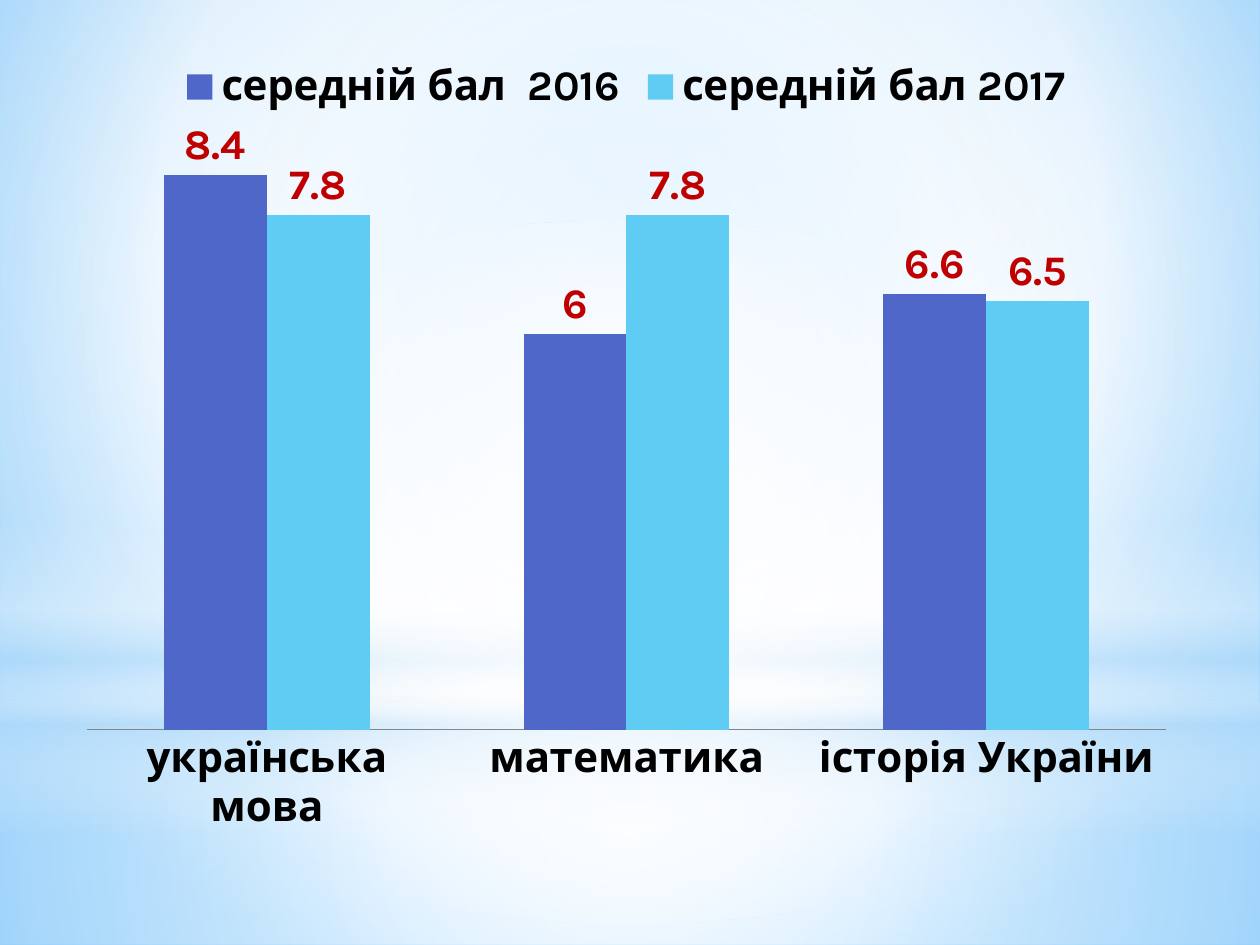
from typing import NamedTuple, Optional

from lxml.etree import SubElement
from pptx import Presentation
from pptx.chart.data import CategoryChartData
from pptx.dml.color import RGBColor
from pptx.enum.chart import XL_CHART_TYPE as Kind
from pptx.enum.chart import XL_LABEL_POSITION as Spot
from pptx.enum.chart import XL_LEGEND_POSITION as Side
from pptx.enum.chart import XL_TICK_MARK as Tick
from pptx.enum.shapes import MSO_SHAPE as Form
from pptx.oxml.ns import qn
from pptx.util import Cm, Pt


class Stop(NamedTuple):
    place: int
    color: str
    alpha: int = 100


class Glow(NamedTuple):
    """A soft layer over the full slide width; no focus means a vertical fade."""
    form: Form
    top: float
    height: float
    stops: list[Stop]
    focus: Optional[tuple] = (50, 50, 50, 50)


class Series(NamedTuple):
    name: str
    values: list[float]
    color: str


WIDE, HIGH = 25.4, 19.05
SKY, PALE, WHITE = "9ED5FF", "B4DCFA", "FFFFFF"
BACK = [Stop(0, SKY), Stop(60, WHITE), Stop(100, "5BB9FF")]
GLOWS = [
    Glow(Form.RECTANGLE, 14.17, 4.88,
         [Stop(0, WHITE, 91), Stop(37, WHITE, 76), Stop(100, PALE, 79)]),
    Glow(Form.RECTANGLE, 0, 14.17,
         [Stop(0, WHITE, 89), Stop(48, WHITE, 62), Stop(100, PALE, 79)]),
    Glow(Form.RECTANGLE, 10.46, 6.35,
         [Stop(0, WHITE, 0), Stop(29, WHITE, 30), Stop(45, PALE, 40),
          Stop(55, WHITE, 26), Stop(65, PALE, 60), Stop(100, WHITE, 0)], None),
    Glow(Form.OVAL, 4.45, 14.17, [Stop(0, WHITE), Stop(56, WHITE, 0)]),
]
SUBJECTS = ["українська мова", "математика", "історія України"]
SCORES = [
    Series("середній бал  2016", [8.4, 6, 6.6], "4E67C8"),
    Series("середній бал 2017", [7.8, 7.8, 6.5], "5ECCF3"),
]


def rgb(color: str) -> RGBColor:
    return RGBColor.from_string(color)


def shade(fill, owner, stops: list[Stop], focus: Optional[tuple]) -> None:
    """Give the fill its gradient, round a focus or from top to bottom."""
    fill.gradient()
    grad = owner.find(".//" + qn("a:gradFill"))
    for child in list(grad):
        grad.remove(child)
    row = SubElement(grad, qn("a:gsLst"))
    for stop in stops:
        mark = SubElement(row, qn("a:gs"), pos=str(stop.place * 1000))
        tone = SubElement(mark, qn("a:srgbClr"), val=stop.color)
        if stop.alpha < 100:
            SubElement(tone, qn("a:alpha"), val=str(stop.alpha * 1000))
    if focus is None:
        SubElement(grad, qn("a:lin"), ang="5400000", scaled="0")
    else:
        ring = SubElement(grad, qn("a:path"), path="circle")
        sides = {side: str(part * 1000) for side, part in zip("ltrb", focus)}
        SubElement(ring, qn("a:fillToRect"), **sides)


def draw_glow(slide, glow: Glow) -> None:
    shape = slide.shapes.add_shape(
        glow.form, 0, Cm(glow.top), Cm(WIDE), Cm(glow.height))
    shape.shadow.inherit = False
    shape.line.fill.background()
    shade(shape.fill, shape._element, glow.stops, glow.focus)


def style(font, color: str = "000000", size: int = 24, bold: bool = True) -> None:
    font.name = "Karla"
    font.size = Pt(size)
    font.bold = bold
    font.color.rgb = rgb(color)


def draw_chart(slide, scores: list[Series]) -> None:
    data = CategoryChartData()
    data.categories = SUBJECTS
    for score in scores:
        data.add_series(score.name, score.values)
    chart = slide.shapes.add_chart(
        Kind.COLUMN_CLUSTERED, Cm(1.3), Cm(0.91), Cm(22.66), Cm(16.18), data).chart
    style(chart.font, size=10, bold=False)
    chart.has_title = False
    chart.has_legend = True
    chart.legend.position = Side.TOP
    chart.legend.include_in_layout = False
    style(chart.legend.font)

    base = chart.category_axis
    base.major_tick_mark = base.minor_tick_mark = Tick.NONE
    base.format.line.color.rgb = rgb("868686")
    style(base.tick_labels.font)
    scale = chart.value_axis
    scale.minimum_scale, scale.maximum_scale = 0, 9
    scale.has_major_gridlines = False
    scale.visible = False

    plot = chart.plots[0]
    plot.gap_width, plot.overlap = 150, 0
    plot.vary_by_categories = False
    for bars, score in zip(plot.series, scores):
        bars.format.fill.solid()
        bars.format.fill.fore_color.rgb = rgb(score.color)
        labels = bars.data_labels
        labels.show_value = True
        labels.position = Spot.OUTSIDE_END
        style(labels.font, "C00000")


def main() -> None:
    deck = Presentation()
    deck.slide_width, deck.slide_height = Cm(WIDE), Cm(HIGH)
    slide = deck.slides.add_slide(deck.slide_layouts[6])
    shade(slide.background.fill, slide._element, BACK, (20, 10, 20, 60))
    for glow in GLOWS:
        draw_glow(slide, glow)
    draw_chart(slide, SCORES)
    deck.save("out.pptx")


if __name__ == "__main__":
    main()
